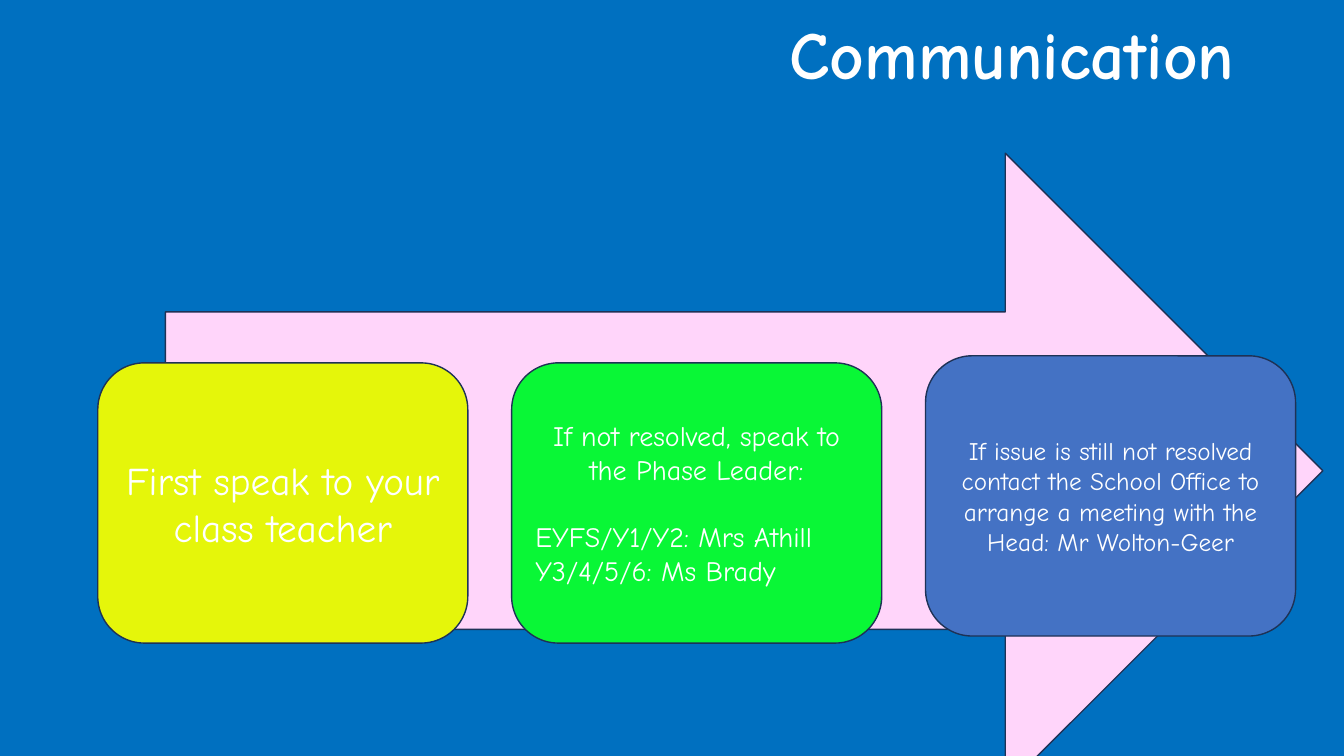
from pptx import Presentation
from pptx.dml.color import RGBColor
from pptx.enum.shapes import MSO_SHAPE
from pptx.enum.text import MSO_ANCHOR, PP_ALIGN
from pptx.util import Inches, Pt

FONT = "Comic Neue"
COLOURS = {
    "background": "0070C0",
    "arrow": "FFD5FA",
    "outline": "1E3256",
    "text": "FFFFFF",
    "teacher": "E5F60A",
    "leader": "09F736",
    "office": "4472C4",
}
STEP_LEFT, STEP_PITCH = 0.97, 4.105
STEP_WIDTH, STEP_HEIGHT = 3.67, 2.78
STEPS = [
    ("teacher", 3.6, 28, "First speak to your class teacher", []),
    ("leader", 3.6, 20, "If not resolved, speak to the Phase Leader:",
     ["EYFS/Y1/Y2: Mrs Athill", "Y3/4/5/6: Ms Brady"]),
    ("office", 3.53, 18, "If issue is still not resolved contact the School Office "
     "to arrange a meeting with the Head: Mr Wolton-Geer", []),
]


def colour(name):
    """Return the named colour."""
    return RGBColor.from_string(COLOURS[name])


def style_text(paragraph, size, align, bold=False):
    """Align a paragraph and format its runs."""
    paragraph.alignment = align
    for run in paragraph.runs:
        run.font.name = FONT
        run.font.size = Pt(size)
        run.font.bold = bold
        run.font.color.rgb = colour("text")


def add_outlined(slide, kind, left, top, width, height, fill):
    """Add a filled shape with the dark outline."""
    outlined = slide.shapes.add_shape(
        kind, Inches(left), Inches(top), Inches(width), Inches(height))
    outlined.shadow.inherit = False
    outlined.fill.solid()
    outlined.fill.fore_color.rgb = colour(fill)
    outlined.line.color.rgb = colour("outline")
    outlined.line.width = Pt(1)
    return outlined


def add_title(slide, text):
    """Place and format the slide title."""
    title = slide.shapes.title
    title.left, title.top = Inches(7.73), Inches(0.07)
    title.width, title.height = Inches(6.58), Inches(0.91)
    frame = title.text_frame
    frame.text = text
    frame.vertical_anchor = MSO_ANCHOR.TOP
    style_text(frame.paragraphs[0], 48, PP_ALIGN.LEFT, bold=True)


def add_step(slide, index, fill, top, size, instruction, contacts):
    """Add one step with its instruction and any contacts below it."""
    step = add_outlined(slide, MSO_SHAPE.ROUNDED_RECTANGLE,
                        STEP_LEFT + index * STEP_PITCH, top,
                        STEP_WIDTH, STEP_HEIGHT, fill)
    frame = step.text_frame
    frame.word_wrap = True
    frame.vertical_anchor = MSO_ANCHOR.MIDDLE
    frame.text = instruction
    style_text(frame.paragraphs[0], size, PP_ALIGN.CENTER)
    for position, contact in enumerate(contacts):
        paragraph = frame.add_paragraph()
        paragraph.text = contact
        paragraph.space_before = Pt(24 if position == 0 else 0)
        style_text(paragraph, size, PP_ALIGN.LEFT)


def main():
    """Build the communication slide."""
    deck = Presentation()
    deck.slide_width, deck.slide_height = Inches(13.33), Inches(7.5)
    slide = deck.slides.add_slide(deck.slide_layouts[5])
    slide.background.fill.solid()
    slide.background.fill.fore_color.rgb = colour("background")
    add_title(slide, "Communication")
    add_outlined(slide, MSO_SHAPE.RIGHT_ARROW, 1.64, 1.52, 11.48, 6.3, "arrow")
    for index, step in enumerate(STEPS):
        add_step(slide, index, *step)
    deck.save("out.pptx")


if __name__ == "__main__":
    main()
